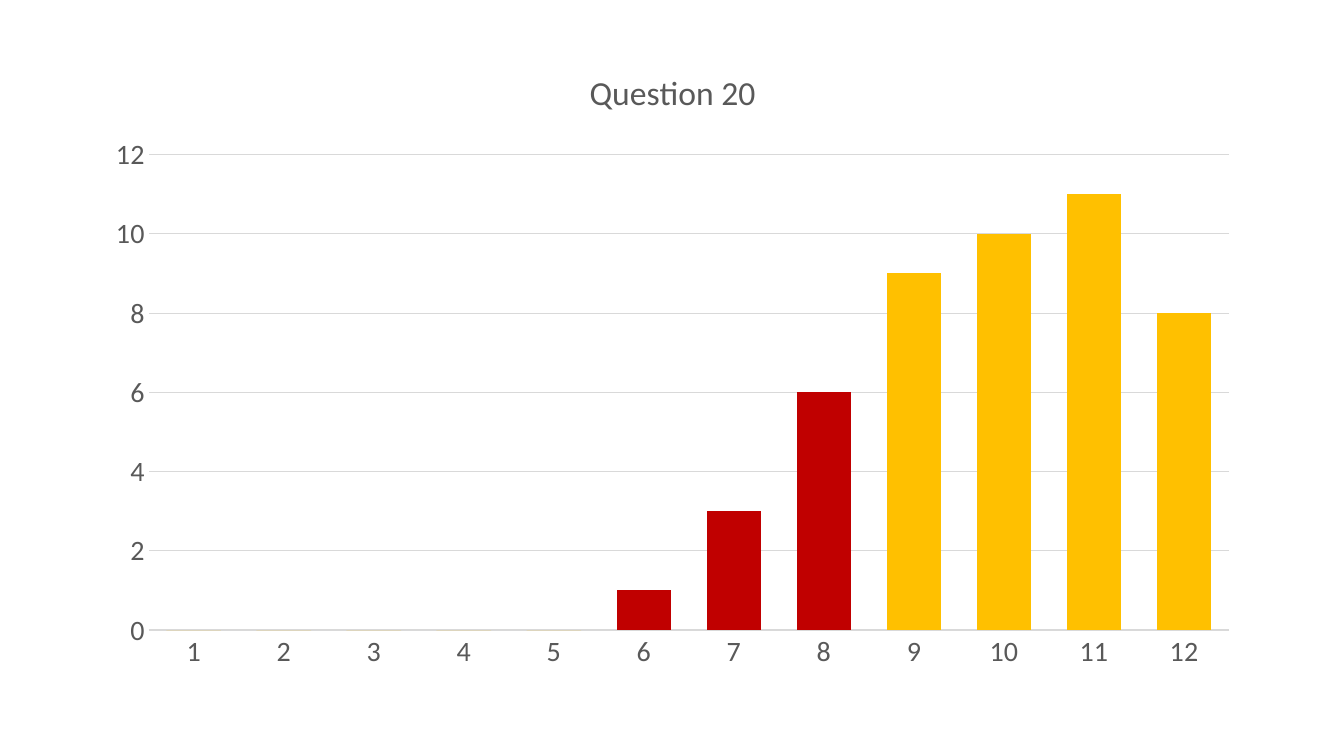
from dataclasses import dataclass

import pptx
import pptx.chart.data
import pptx.dml.color
import pptx.enum.chart
import pptx.util
from pptx.util import Inches


@dataclass(frozen=True)
class Theme:
    font: str = "Calibri"
    text: str = "595959"
    rule: str = "D9D9D9"
    bar: str = "FFC000"
    low_bar: str = "C00000"
    title_size: int = 24
    label_size: int = 20
    rule_width: float = 0.75


THEME = Theme()
SCORES = [0, 0, 0, 0, 0, 1, 3, 6, 9, 10, 11, 8]
LOW_SCORE_QUESTIONS = range(5, 8)


def rgb(value):
    return pptx.dml.color.RGBColor.from_string(value)


def style_font(font, size):
    font.name = THEME.font
    font.size = pptx.util.Pt(size)
    font.bold = False
    font.color.rgb = rgb(THEME.text)


def style_rule(line):
    line.color.rgb = rgb(THEME.rule)
    line.width = pptx.util.Pt(THEME.rule_width)


def fill_bar(bar, color):
    bar.format.fill.solid()
    bar.format.fill.fore_color.rgb = rgb(color)


def add_score_chart(page):
    data = pptx.chart.data.CategoryChartData()
    data.categories = [str(number) for number in range(1, len(SCORES) + 1)]
    data.add_series("Series 1", SCORES)
    kind = pptx.enum.chart.XL_CHART_TYPE.COLUMN_CLUSTERED
    frame = page.shapes.add_chart(
        kind, Inches(0.92), Inches(0.45), Inches(11.5), Inches(6.31), data
    )
    return frame.chart


def style_title(chart, text):
    chart.has_title = True
    chart.chart_title.include_in_layout = False
    para = chart.chart_title.text_frame.paragraphs[0]
    span = para.add_run()
    span.text = text
    style_font(span.font, THEME.title_size)


def style_axes(chart):
    for axis in (chart.category_axis, chart.value_axis):
        axis.major_tick_mark = pptx.enum.chart.XL_TICK_MARK.NONE
        axis.minor_tick_mark = pptx.enum.chart.XL_TICK_MARK.NONE
        style_font(axis.tick_labels.font, THEME.label_size)
    style_rule(chart.category_axis.format.line)
    chart.value_axis.format.line.fill.background()
    chart.value_axis.has_major_gridlines = True
    style_rule(chart.value_axis.major_gridlines.format.line)


def style_bars(chart):
    plot = chart.plots[0]
    plot.gap_width = 65
    plot.overlap = -27
    plot.vary_by_categories = False
    series = plot.series[0]
    fill_bar(series, THEME.bar)
    for index in LOW_SCORE_QUESTIONS:
        fill_bar(series.points[index], THEME.low_bar)


def main():
    deck = pptx.Presentation()
    deck.slide_width = Inches(13.33)
    deck.slide_height = Inches(7.5)
    page = deck.slides.add_slide(deck.slide_layouts[6])
    chart = add_score_chart(page)
    chart.has_legend = False
    style_font(chart.font, THEME.label_size)
    style_title(chart, "Question 20")
    style_axes(chart)
    style_bars(chart)
    deck.save("out.pptx")


if __name__ == "__main__":
    main()
